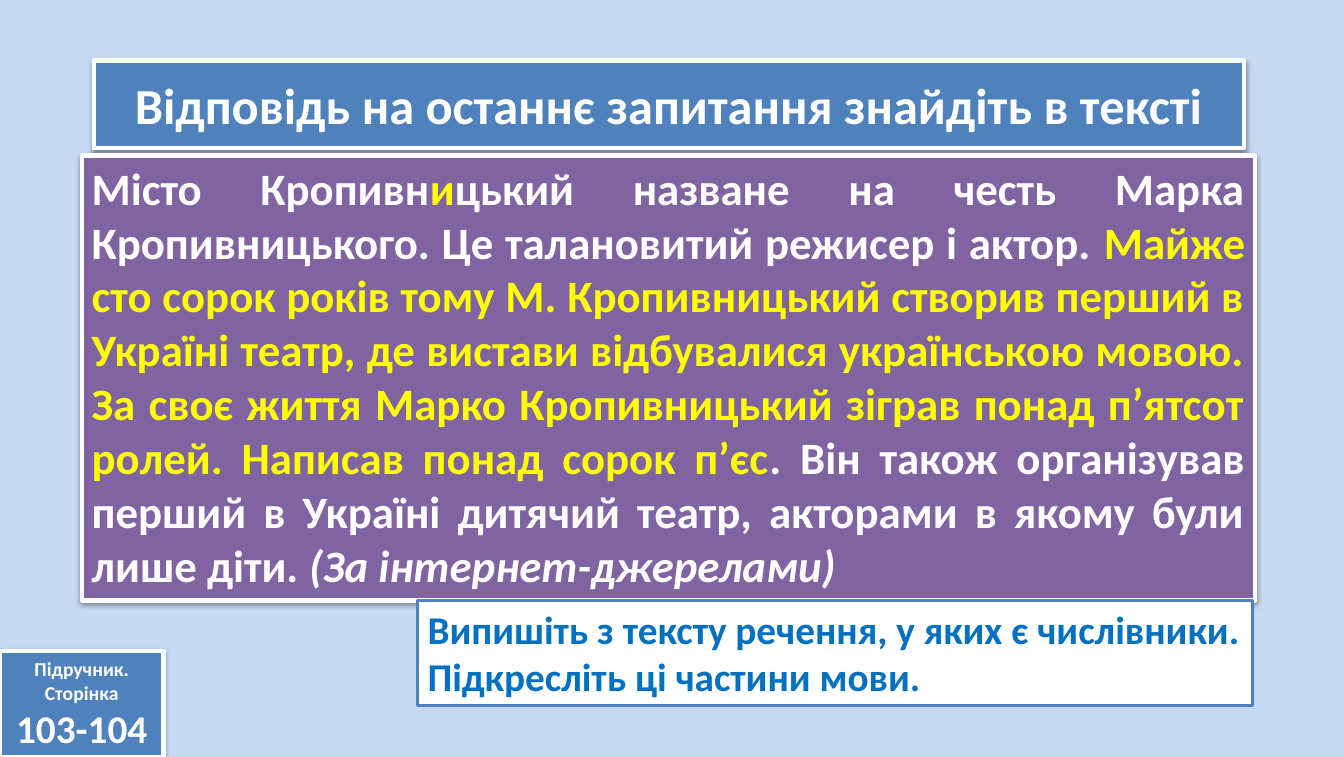
import lxml.etree
import pptx
import pptx.dml.color
import pptx.enum.shapes
import pptx.enum.text
import pptx.oxml
import pptx.oxml.ns
import pptx.util

PX = 9144  # 100 px to the inch
THEME = {
    "font": "Calibri",
    "background": "C6D9F1", "blue": "4F81BD", "purple": "8064A2",
    "white": "FFFFFF", "yellow": "FFFF00", "task": "0070C0", "shadow": "000000",
    "title": 36, "story": 32, "large": 28, "small": 14,
}
ALIGN = pptx.enum.text.PP_ALIGN
ANCHOR = pptx.enum.text.MSO_ANCHOR
FIT = pptx.enum.text.MSO_AUTO_SIZE


def color(name):
    return pptx.dml.color.RGBColor.from_string(THEME[name])


def add_shadow(box):
    """Give the box a soft shadow that falls straight down."""
    effects = box._element.spPr.find(pptx.oxml.ns.qn("a:effectLst"))
    effects.append(pptx.oxml.parse_xml(
        f'<a:outerShdw {pptx.oxml.ns.nsdecls("a")} blurRad="40000" dist="20000" '
        f'dir="5400000" rotWithShape="0"><a:srgbClr val="{THEME["shadow"]}">'
        '<a:alpha val="38000"/></a:srgbClr></a:outerShdw>'))


# Each paragraph is a list of spans: text, colour, size, italic
title = [[("Відповідь на останнє запитання знайдіть в тексті", "white", "title", False)]]
story = [[
    ("Місто Кропивн", "white", "story", False),
    ("и", "yellow", "story", False),
    ("цький назване на честь Марка Кропивницького. Це талановитий режисер і актор. ",
     "white", "story", False),
    ("Майже сто сорок років тому М. Кропивницький створив перший в Україні театр, "
     "де вистави відбувалися українською мовою. За своє життя Марко Кропивницький "
     "зіграв понад п’ятсот ролей. Написав понад сорок п’єс", "yellow", "story", False),
    (". Він також організував перший в Україні дитячий театр, акторами в якому "
     "були лише діти. ", "white", "story", False),
    ("(За інтернет-джерелами)", "white", "story", True),
]]
page_reference = [
    [("Підручник.", "white", "small", False)],
    [("Сторінка", "white", "small", False)],
    [("103-104", "white", "large", False)],
]
task = [[("Випишіть з тексту речення, у яких є числівники. Підкресліть ці частини мови.",
          "task", "large", False)]]

# Place, fill, line colour, line width, shadow, alignment, frame format, paragraphs
centred = {"vertical_anchor": ANCHOR.MIDDLE, "auto_size": FIT.NONE}
growing = {"vertical_anchor": ANCHOR.TOP, "auto_size": FIT.SHAPE_TO_FIT_TEXT}
boxes = [
    ((93, 60, 1140, 87), "blue", "white", 3, True, ALIGN.CENTER, centred, title),
    ((81, 154, 1163, 441), "purple", "white", 3, True, ALIGN.JUSTIFY, growing, story),
    ((0, 645, 162, 105), "blue", "white", 3, True, ALIGN.CENTER, centred, page_reference),
    ((414, 595, 827, 104), "white", "blue", 2, False, ALIGN.LEFT, growing, task),
]

deck = pptx.Presentation()
deck.slide_width = 1332 * PX
deck.slide_height = 750 * PX
page = deck.slides.add_slide(deck.slide_layouts[6])
page.background.fill.solid()
page.background.fill.fore_color.rgb = color("background")

for place, fill, line, width, shadowed, align, frame_format, paragraphs in boxes:
    box = page.shapes.add_shape(pptx.enum.shapes.MSO_SHAPE.RECTANGLE,
                                *(length * PX for length in place))
    box.fill.solid()
    box.fill.fore_color.rgb = color(fill)
    box.line.color.rgb = color(line)
    box.line.width = pptx.util.Pt(width)
    box.shadow.inherit = False
    if shadowed:
        add_shadow(box)

    frame = box.text_frame
    frame.word_wrap = True
    for name, value in frame_format.items():
        setattr(frame, name, value)
    for index, spans in enumerate(paragraphs):
        para = frame.add_paragraph() if index else frame.paragraphs[0]
        para.alignment = align
        for text, ink, size, italic in spans:
            span = para.add_run()
            span.text = text
            span.font.color.rgb = color(ink)
            font_format = {"name": THEME["font"], "size": pptx.util.Pt(THEME[size]),
                           "bold": True, "italic": italic}
            for name, value in font_format.items():
                setattr(span.font, name, value)

deck.save("out.pptx")
